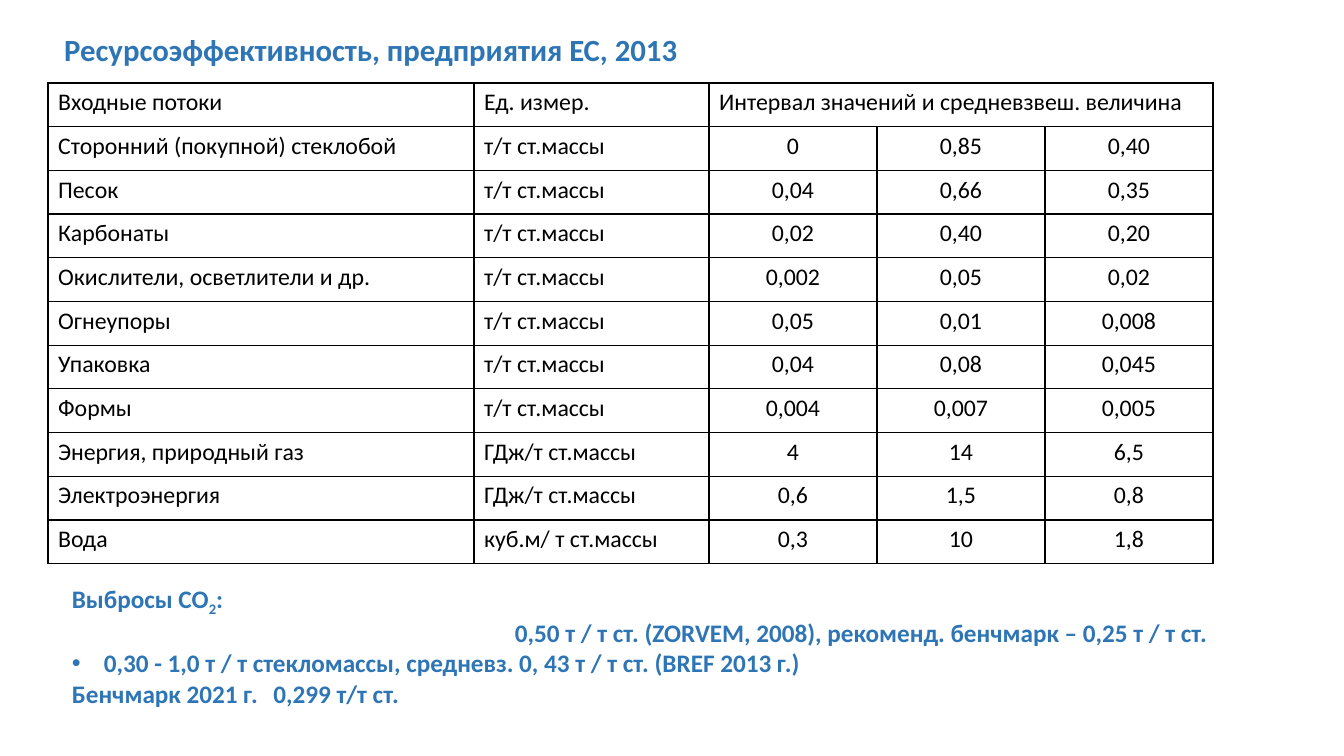
"""Build the slide on resource efficiency of EU glass plants."""
from lxml import etree
from pptx import Presentation
from pptx import util as u
from pptx.dml.color import RGBColor
from pptx.enum import text
from pptx.oxml.ns import qn

HUES = {"blue": "2E75B6", "black": "000000", "white": "FFFFFF"}
FONT = "Calibri"
MASS, HEAT = "т/т ст.массы", "ГДж/т ст.массы"
HEAD = ("Входные потоки", "Ед. измер.", "Интервал значений и средневзвеш. величина", "", "")
FLOWS = [
    ("Сторонний (покупной) стеклобой", MASS, "0", "0,85", "0,40"),
    ("Песок", MASS, "0,04", "0,66", "0,35"),
    ("Карбонаты", MASS, "0,02", "0,40", "0,20"),
    ("Окислители, осветлители и др.", MASS, "0,002", "0,05", "0,02"),
    ("Огнеупоры", MASS, "0,05", "0,01", "0,008"),
    ("Упаковка", MASS, "0,04", "0,08", "0,045"),
    ("Формы", MASS, "0,004", "0,007", "0,005"),
    ("Энергия, природный газ", HEAT, "4", "14", "6,5"),
    ("Электроэнергия", HEAT, "0,6", "1,5", "0,8"),
    ("Вода", "куб.м/ т ст.массы", "0,3", "10", "1,8"),
]
COLS = (426, 235, 168, 168, 168)


def px(n):
    """Turn pixels into EMU."""
    return u.Emu(round(n * 914400 / 100.8))


def style(para, size, hue, bold=False):
    """Format every run of a paragraph."""
    for run in para.runs:
        font = run.font
        font.name, font.size, font.bold = FONT, u.Pt(size), bold
        font.color.rgb = RGBColor.from_string(HUES[hue])


def add_title(slide, words, box):
    """Place and format the title."""
    title = slide.shapes.title
    title.left, title.top, title.width, title.height = map(px, box)
    frame = title.text_frame
    frame.text = words
    frame.word_wrap = True
    frame.vertical_anchor = text.MSO_ANCHOR.MIDDLE
    para = frame.paragraphs[0]
    para.alignment = text.PP_ALIGN.LEFT
    para.line_spacing = 0.9
    style(para, 22, "blue", True)


def add_edges(cell):
    """Draw thin black lines on all sides of a cell."""
    props = cell._tc.get_or_add_tcPr()
    for side in ("a:lnL", "a:lnR", "a:lnT", "a:lnB"):
        line = etree.SubElement(props, qn(side), w=str(u.Pt(1)))
        fill = etree.SubElement(line, qn("a:solidFill"))
        etree.SubElement(fill, qn("a:srgbClr"), val=HUES["black"])


def add_flows(slide, rows, box):
    """Add the table of input flows."""
    table = slide.shapes.add_table(len(rows), len(COLS), *map(px, box)).table
    table.first_row = table.horz_banding = False
    for col, wide in zip(table.columns, COLS):
        col.width = px(wide)
    for i, row in enumerate(rows):
        table.rows[i].height = px(box[3] / len(rows))
        for j, words in enumerate(row):
            cell = table.cell(i, j)
            add_edges(cell)
            cell.fill.solid()
            cell.fill.fore_color.rgb = RGBColor.from_string(HUES["white"])
            cell.text = words
            para = cell.text_frame.paragraphs[0]
            if i and j > 1:
                para.alignment = text.PP_ALIGN.CENTER
            style(para, 17, "black")
    table.cell(0, 2).merge(table.cell(0, 4))


def indent(para, left, hang=0):
    """Set the left and hanging indents of a paragraph."""
    props = para._p.get_or_add_pPr()
    props.set("marL", str(px(left)))
    props.set("indent", str(-px(hang)))
    return props


def add_notes(slide, box):
    """Add the text on carbon dioxide emissions."""
    frame = slide.shapes.add_textbox(*map(px, box)).text_frame
    frame.word_wrap = True
    frame.auto_size = text.MSO_AUTO_SIZE.SHAPE_TO_FIT_TEXT
    head = frame.paragraphs[0]
    goal, span, mark = [frame.add_paragraph() for _ in range(3)]
    for part in ("Выбросы CO", "2", ":"):
        head.add_run().text = part
    goal.text = "0,50 т / т ст. (ZORVEM, 2008), рекоменд. бенчмарк – 0,25 т / т ст."
    span.text = "0,30 - 1,0 т / т стекломассы, средневз. 0, 43 т / т ст. (BREF 2013 г.)"
    mark.text = "Бенчмарк 2021 г.\t0,299 т/т ст."
    for para in frame.paragraphs:
        style(para, 18, "blue", True)
    head.runs[1]._r.get_or_add_rPr().set("baseline", "-25000")
    indent(goal, 443)
    props = indent(span, 32, 32)
    etree.SubElement(props, qn("a:buFont"), typeface="Arial")
    etree.SubElement(props, qn("a:buChar"), char="•")
    tabs = etree.SubElement(indent(mark, 0), qn("a:tabLst"))
    etree.SubElement(tabs, qn("a:tab"), pos=str(px(449)), algn="l")


def main():
    """Build and save the slide."""
    deck = Presentation()
    deck.slide_width, deck.slide_height = px(1344), px(756)
    slide = deck.slides.add_slide(deck.slide_layouts[5])
    add_title(slide, "Ресурсоэффективность, предприятия ЕС, 2013", (54, 21, 1159, 62))
    add_flows(slide, [HEAD, *FLOWS], (48, 83, 1165, 481))
    add_notes(slide, (62, 578, 1188, 163))
    deck.save("out.pptx")


if __name__ == "__main__":
    main()
